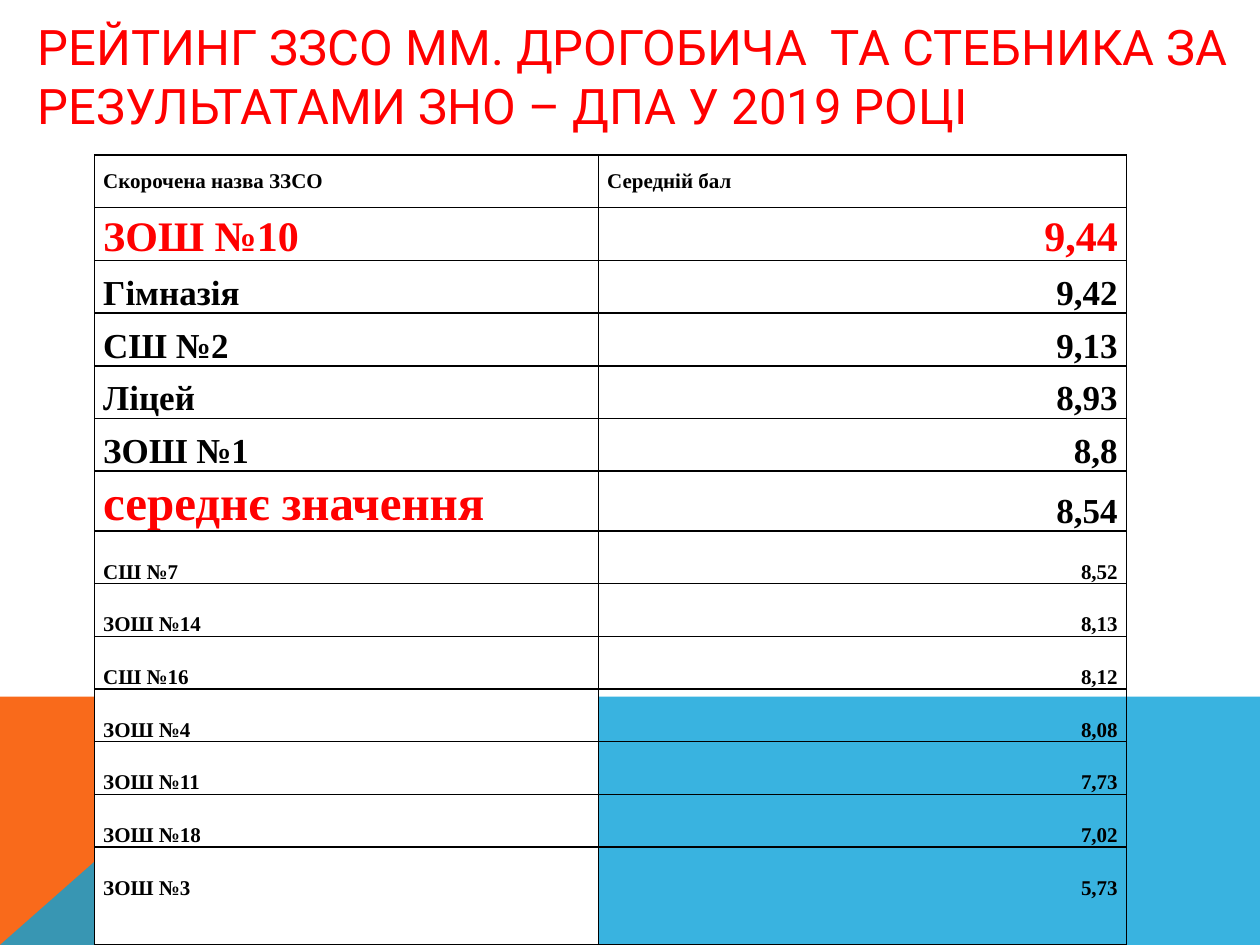
from lxml.etree import SubElement
from pptx import Presentation
from pptx.dml.color import RGBColor
from pptx.enum.text import MSO_ANCHOR as Anchor, MSO_AUTO_SIZE as AutoSize, PP_ALIGN as Align
from pptx.oxml.ns import qn
from pptx.util import Pt

RED = RGBColor(0xFF, 0x00, 0x00)
BLACK = RGBColor(0x00, 0x00, 0x00)
WHITE = RGBColor(0xFF, 0xFF, 0xFF)
ORANGE = RGBColor(0xF9, 0x6A, 0x1B)
BLUE = RGBColor(0x08, 0xA1, 0xD9)

TITLE = "РЕЙТИНГ ЗЗСО ММ. ДРОГОБИЧА  ТА СТЕБНИКА ЗА РЕЗУЛЬТАТАМИ ЗНО – ДПА У 2019 РОЦІ"
HEADER = ("Скорочена назва ЗЗСО", "Середній бал")
SCORES = [
    ("ЗОШ №10", "9,44"),
    ("Гімназія", "9,42"),
    ("СШ №2", "9,13"),
    ("Ліцей", "8,93"),
    ("ЗОШ №1", "8,8"),
    ("середнє значення", "8,54"),
    ("СШ №7", "8,52"),
    ("ЗОШ №14", "8,13"),
    ("СШ №16", "8,12"),
    ("ЗОШ №4", "8,08"),
    ("ЗОШ №11", "7,73"),
    ("ЗОШ №18", "7,02"),
    ("ЗОШ №3", "5,73"),
]
ROWS = [HEADER, *SCORES, ("", "")]
LEADER, AVERAGE, LAST_SCHOOL, BLANK = 1, 6, 13, 14
WHITE_SCORES = (LEADER, AVERAGE + 1)


class RatingSlide:
    title_font = "Roboto"
    table_font = "Times New Roman"

    def __init__(self, deck):
        self.slide = deck.slides.add_slide(deck.slide_layouts[5])

    def title(self, text, left, top, width, height):
        heading = self.slide.shapes.title
        heading.left, heading.top = Pt(left), Pt(top)
        heading.width, heading.height = Pt(width), Pt(height)
        frame = heading.text_frame
        frame.text = text
        frame.word_wrap = True
        frame.auto_size = AutoSize.NONE
        frame.vertical_anchor = Anchor.MIDDLE
        frame.paragraphs[0].alignment = Align.LEFT
        self.style(frame.paragraphs[0].font, self.title_font, 28, RED, False)

    def band(self, points, color, opacity=100):
        builder = self.slide.shapes.build_freeform(*points[0], scale=Pt(1))
        builder.add_line_segments(points[1:], close=True)
        band = builder.convert_to_shape()
        band.shadow.inherit = False
        band.line.fill.background()
        band.fill.solid()
        band.fill.fore_color.rgb = color
        if opacity < 100:
            tint = band.fill._xPr.find(".//" + qn("a:srgbClr"))
            SubElement(tint, qn("a:alpha"), val=str(opacity * 1000))

    def table(self, left, top, widths, heights):
        table = self.slide.shapes.add_table(
            len(heights), len(widths), Pt(left), Pt(top), Pt(sum(widths)), Pt(sum(heights))
        ).table
        table.first_row = table.horz_banding = False
        for column, width in zip(table.columns, widths):
            column.width = Pt(width)
        for row, height in zip(table.rows, heights):
            row.height = Pt(height)
        return table

    def cell(self, cell, text, size, color, fill, anchor, align, open_sides=""):
        cell.margin_left = cell.margin_right = Pt(5)
        cell.margin_top = cell.margin_bottom = 0
        cell.vertical_anchor = anchor
        self.borders(cell, open_sides)
        if fill is None:
            cell.fill.background()
        else:
            cell.fill.solid()
            cell.fill.fore_color.rgb = fill
        cell.text = text
        paragraph = cell.text_frame.paragraphs[0]
        paragraph.alignment = align
        self.style(paragraph.font, self.table_font, size, color, True)

    def borders(self, cell, open_sides):
        """Draw a thin black line on every side but the open ones."""
        properties = cell._tc.get_or_add_tcPr()
        for side in "LRTB":
            line = SubElement(properties, qn("a:ln" + side), w=str(Pt(1)))
            if side in open_sides:
                SubElement(line, qn("a:noFill"))
            else:
                solid = SubElement(line, qn("a:solidFill"))
                SubElement(solid, qn("a:srgbClr"), val=str(BLACK))

    def style(self, font, name, size, color, bold):
        font.name = name
        font.size = Pt(size)
        font.bold = bold
        font.color.rgb = color


def row_style(row):
    """Return the size and colour of the name, then those of the score."""
    if row == LEADER:
        return (24, RED), (24, RED)
    if row == AVERAGE:
        return (28, RED), (20, BLACK)
    size = 20 if LEADER < row < AVERAGE else 12
    return (size, BLACK), (size, BLACK)


def main():
    deck = Presentation()
    deck.slide_width, deck.slide_height = Pt(720), Pt(540)
    page = RatingSlide(deck)

    page.band([(0, 540), (0, 397.6), (160.6, 397.6), (281.5, 540)], ORANGE)
    page.band([(0, 540), (160.6, 397.6), (720, 397.8), (720, 540)], BLUE, opacity=80)
    page.title(TITLE, 14.4, 9.4, 697.7, 67.7)

    heights = [30.12] * len(ROWS)
    heights[AVERAGE], heights[BLANK] = 34.2, 25.5
    rating = page.table(54, 88.6, [288, 301.7], heights)
    open_sides = {LAST_SCHOOL: "B", BLANK: "T"}
    for row, texts in enumerate(ROWS):
        for column, (text, (size, color)) in enumerate(zip(texts, row_style(row))):
            header = row == 0
            white = not header and (column == 0 or row in WHITE_SCORES)
            page.cell(
                rating.cell(row, column), text, size, color,
                fill=WHITE if white else None,
                anchor=Anchor.MIDDLE if header else Anchor.BOTTOM,
                align=Align.RIGHT if column and not header else Align.LEFT,
                open_sides=open_sides.get(row, ""),
            )

    deck.save("out.pptx")


if __name__ == "__main__":
    main()
